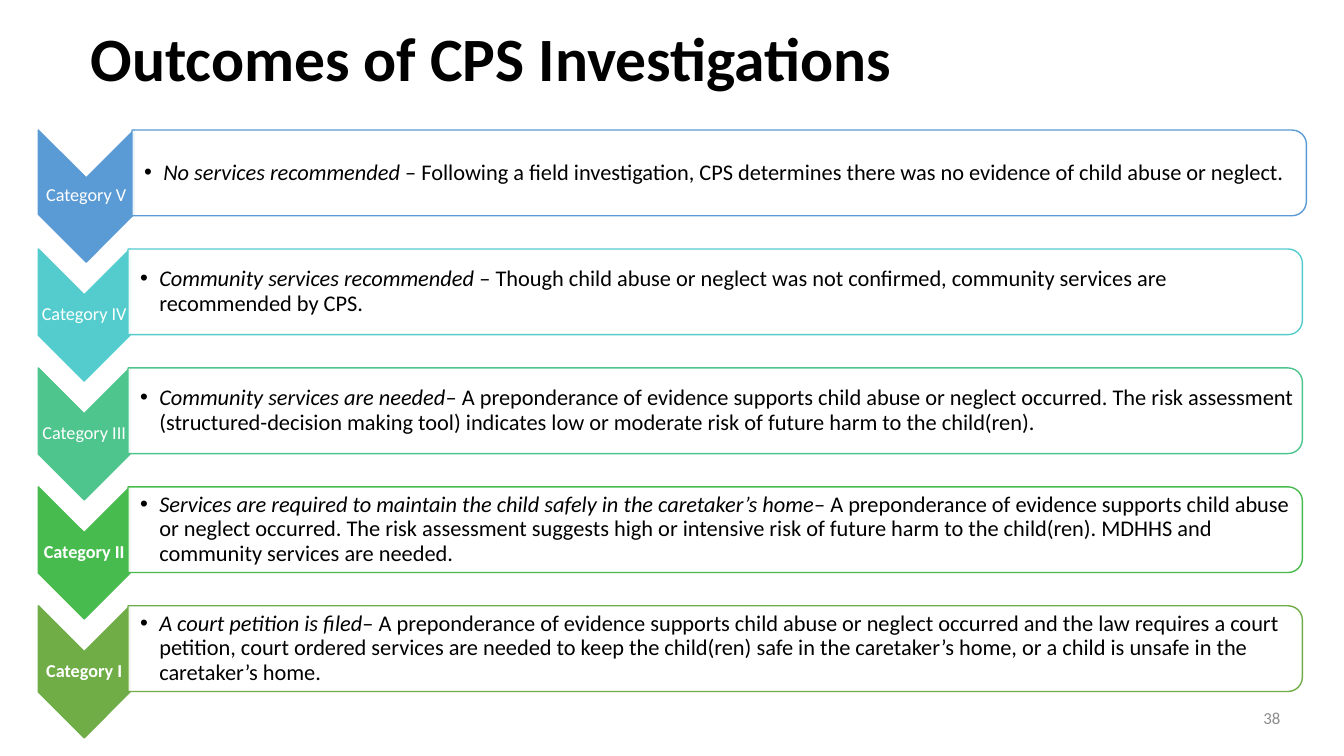
from lxml import etree
from pptx import Presentation
from pptx import util as u
from pptx.dml.color import RGBColor
from pptx.enum import shapes, text
from pptx.oxml.ns import qn

COLS, ROWS = 133.33, 75
TOP, STEP, LEFT = 12.9, 11.8, 3.8
PANEL = 116.5, 8.5
DROP = 13.1

STAGES = [
    ("Category V", "5B9BD5", 9.5, False, "No services recommended ",
     "– Following a field investigation, CPS determines there was no evidence "
     "of child abuse or neglect."),
    ("Category IV", "54CCCD", 9.1, False, "Community services recommended",
     " – Though child abuse or neglect was not confirmed, community services "
     "are recommended by CPS."),
    ("Category III", "4DC58D", 9.1, False, "Community services are needed",
     "– A preponderance of evidence supports child abuse or neglect occurred. "
     "The risk assessment (structured-decision making tool) indicates low or "
     "moderate risk of future harm to the child(ren)."),
    ("Category II", "48BB4F", 9.1, True,
     "Services are required to maintain the child safely in the caretaker’s home",
     "– A preponderance of evidence supports child abuse or neglect occurred. "
     "The risk assessment suggests high or intensive risk of future harm to the "
     "child(ren). MDHHS and community services are needed."),
    ("Category I", "70AD47", 9.1, True, "A court petition is filed",
     "– A preponderance of evidence supports child abuse or neglect occurred and "
     "the law requires a court petition, court ordered services are needed to "
     "keep the child(ren) safe in the caretaker’s home, or a child is unsafe in "
     "the caretaker’s home."),
]


def color(code):
    """Turn a hex string into a colour."""
    return RGBColor.from_string(code)


class Deck:
    """Hold the style, the grid and the current slide."""

    font = "Calibri"
    thin = 0.1, 0.1, 0.1, 0.1

    def __init__(self):
        """Open a wide deck with one blank slide."""
        self.show = Presentation()
        self.show.slide_width = u.Inches(13.333)
        self.show.slide_height = u.Inches(7.5)
        self.slide = self.show.slides.add_slide(self.show.slide_layouts[6])

    def grid(self, left, top, wide, high):
        """Turn columns and rows into slide lengths."""
        col = self.show.slide_width / COLS
        row = self.show.slide_height / ROWS
        return [round(n) for n in (left * col, top * row, wide * col, high * row)]

    def turned(self, kind, box, fill, line, alpha=None):
        """Add a shape turned a quarter right that covers the box."""
        left, top, wide, high = box
        shift = (wide - high) / 2
        place = self.grid(left + shift, top - shift, high, wide)
        shape = self.slide.shapes.add_shape(kind, *place)
        shape.rotation = 90
        shape.shadow.inherit = False
        shape.fill.solid()
        shape.fill.fore_color.rgb = color(fill)
        shape.line.color.rgb = color(line)
        shape.line.width = u.Pt(1)
        if alpha:
            tone = shape.fill._xPr.find(qn("a:solidFill"))[0]
            etree.SubElement(tone, qn("a:alpha"), val=str(alpha * 1000))

    def words(self, box, parts, size, tint="000000", bold=False,
              align=text.PP_ALIGN.LEFT, inset=(1, 0.5, 1, 0.5), space=0.9):
        """Add one paragraph of (wording, italic) parts and return it."""
        frame = self.slide.shapes.add_textbox(*self.grid(*box)).text_frame
        frame.word_wrap = True
        frame.vertical_anchor = text.MSO_ANCHOR.MIDDLE
        (frame.margin_left, frame.margin_top,
         frame.margin_right, frame.margin_bottom) = self.grid(*inset)
        para = frame.paragraphs[0]
        para.alignment = align
        para.line_spacing = space
        for wording, slant in parts:
            run = para.add_run()
            run.text = wording
            run.font.name = self.font
            run.font.size = u.Pt(size)
            run.font.color.rgb = color(tint)
            run.font.bold = bold
            run.font.italic = slant
        return para

    def bullet(self, para, hang):
        """Give a paragraph a hanging dot."""
        props = para._p.get_or_add_pPr()
        props.set("marL", str(u.Inches(hang)))
        props.set("indent", str(-u.Inches(hang)))
        etree.SubElement(props, qn("a:buFont"), typeface="Arial")
        etree.SubElement(props, qn("a:buChar"), char="•")

    def stage(self, index, label, tint, wide, bold, lead, rest):
        """Add one chevron with its label, panel and bullet."""
        top = TOP + index * STEP
        side = LEFT + wide
        span, high = PANEL
        arrow = LEFT, top, wide, DROP
        self.turned(shapes.MSO_SHAPE.CHEVRON, arrow, tint, tint)
        self.words(arrow, [(label, False)], 13, "FFFFFF", bold,
                   text.PP_ALIGN.CENTER, self.thin)
        self.turned(shapes.MSO_SHAPE.ROUND_2_SAME_RECTANGLE,
                    (side - 0.2, top, span, high), "FFFFFF", tint, 90)
        para = self.words((side - 0.2, top + 0.4, span - 0.4, high - 0.8),
                          [(lead, True), (rest, False)], 16,
                          inset=(1.2, 0.1, 0.1, 0.1))
        self.bullet(para, 0.19)


def main():
    """Build the slide and save it."""
    deck = Deck()
    deck.words((8, 1.7, 98.2, 8.8), [("Outcomes of CPS Investigations", False)],
               44, bold=True)
    for index, stage in enumerate(STAGES):
        deck.stage(index, *stage)
    deck.words((98, 69.2, 30, 4), [("38", False)], 12, "8C8C8C",
               align=text.PP_ALIGN.RIGHT, space=1)
    deck.show.save("out.pptx")


if __name__ == "__main__":
    main()
